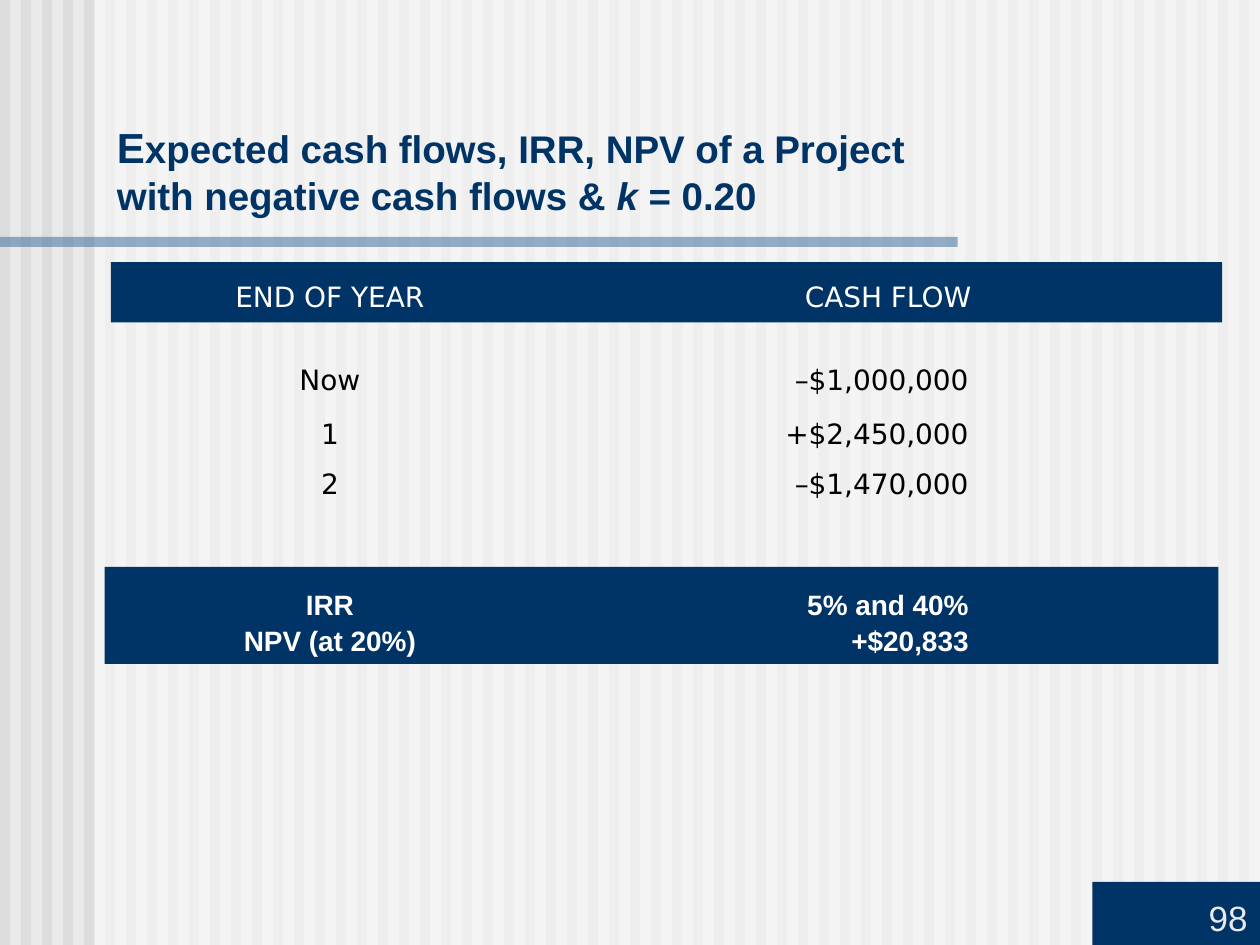
from lxml.etree import SubElement as Sub
from pptx import Presentation
from pptx.dml.color import RGBColor
from pptx.enum.shapes import MSO_SHAPE as Shape
from pptx.enum.text import MSO_ANCHOR as Anchor, PP_ALIGN as Align
from pptx.oxml.ns import qn
from pptx.util import Inches, Pt

NAVY, GREY, WHITE, BLACK = "003366", "EAEAEA", "FFFFFF", "000000"
HEAD = [(1.69, "ctr"), (6.12, "ctr")]
ROWS = [(1.69, "ctr"), (6.76, "r"), (7.94, "r")]
TALL = {"size": 24, "name": "DejaVu Sans", "color": BLACK}
PLAIN = {"size": 16, "name": "DejaVu Sans", "color": BLACK}
LIGHT = {**PLAIN, "color": WHITE}
BOLD = {"size": 16, "name": "Arial", "color": WHITE, "bold": True}
TITLE = {"size": 22, "name": "Arial", "color": NAVY, "bold": True}


def paint(fill, color, alpha=None):
    fill.solid()
    fill.fore_color.rgb = RGBColor.from_string(color)
    if alpha:
        tint = fill._xPr.find(qn("a:solidFill"))[0]
        Sub(tint, qn("a:alpha")).set("val", str(alpha * 1000))


def rect(slide, box, color, alpha=None):
    shape = slide.shapes.add_shape(Shape.RECTANGLE, *map(Inches, box))
    shape.shadow.inherit = False
    shape.line.fill.background()
    paint(shape.fill, color, alpha)
    return shape


def style(font, form):
    for key, value in form.items():
        if key == "color":
            paint(font.fill, value)
        else:
            setattr(font, key, Pt(value) if key == "size" else value)


def write(frame, paras, tabs=(), **form):
    frame.word_wrap = True
    for i, runs in enumerate(paras):
        para = frame.add_paragraph() if i else frame.paragraphs[0]
        for key, value in {"alignment": Align.LEFT, **form}.items():
            setattr(para, key, value)
        if tabs:
            stops = Sub(para._p.get_or_add_pPr(), qn("a:tabLst"))
            for pos, kind in tabs:
                stop = Sub(stops, qn("a:tab"))
                stop.set("pos", str(Inches(pos)))
                stop.set("algn", kind)
        for text, font in runs:
            if text == "\n":
                para.add_line_break()
            else:
                run = para.add_run()
                run.text = text
                style(run.font, font)


def label(slide, box, paras, anchor=Anchor.TOP, **form):
    frame = slide.shapes.add_textbox(*map(Inches, box)).text_frame
    frame.vertical_anchor = anchor
    write(frame, paras, **form)


def lines(rows, font):
    paras = [[("\t" + "\t".join(row), font)] for row in rows]
    paras[0] = [("\t", TALL), ("\t".join(rows[0]), font)]
    return paras


def backdrop(slide, box):
    left, top, width, height = box
    paint(slide.background.fill, GREY)
    for i in range(int(width * 6)):
        rect(slide, (left + i / 6, top, 0.08, height), "DDDDDD")
    rect(slide, (left + 0.75, top, width - 0.75, height), WHITE, 50)
    rect(slide, (left, top + 1.88, 7.6, 0.08), "336699", 50)


def number(slide, box):
    frame = rect(slide, box, NAVY).text_frame
    frame.vertical_anchor = Anchor.BOTTOM
    font = {"size": 20, "name": "Arial", "color": GREY}
    write(frame, [[("98", font)]], alignment=Align.RIGHT)


def heading(slide, box):
    runs = [
        ("E", {**TITLE, "size": 24}),
        ("xpected cash flows, IRR, NPV of a Project", TITLE),
        ("\n", None),
        ("with negative cash flows & ", TITLE),
        ("k ", {**TITLE, "italic": True}),
        ("= 0.20", TITLE),
    ]
    label(slide, box, [runs], Anchor.BOTTOM)


def flows(slide, box):
    left, top, width, _ = box
    rect(slide, (left + 0.05, top + 0.02, 8.82, 0.48), NAVY)
    label(slide, (left, top, width, 0.5),
          lines([("END OF YEAR", "CASH FLOW")], LIGHT), tabs=HEAD)
    rows = [("Now", "–$1,000,000"), ("1", "+$2,450,000"), ("2", "–$1,470,000")]
    label(slide, (left, top + 0.46, width, 1.52),
          lines(rows, PLAIN), tabs=ROWS, line_spacing=1.5)
    frame = rect(slide, (left, top + 2.44, width, 0.77), NAVY).text_frame
    frame.vertical_anchor = Anchor.TOP
    sums = [("IRR", "5% and 40%"), ("NPV (at 20%)", "+$20,833")]
    write(frame, lines(sums, BOLD), tabs=ROWS)


def main():
    deck = Presentation()
    deck.slide_width, deck.slide_height = Inches(10), Inches(7.5)
    slide = deck.slides.add_slide(deck.slide_layouts[6])
    backdrop(slide, (0, 0, 10, 7.5))
    number(slide, (8.67, 7, 1.33, 0.5))
    flows(slide, (0.83, 2.06, 8.84, 3.21))
    heading(slide, (0.83, 0.91, 8.93, 0.87))
    deck.save("out.pptx")


if __name__ == "__main__":
    main()
